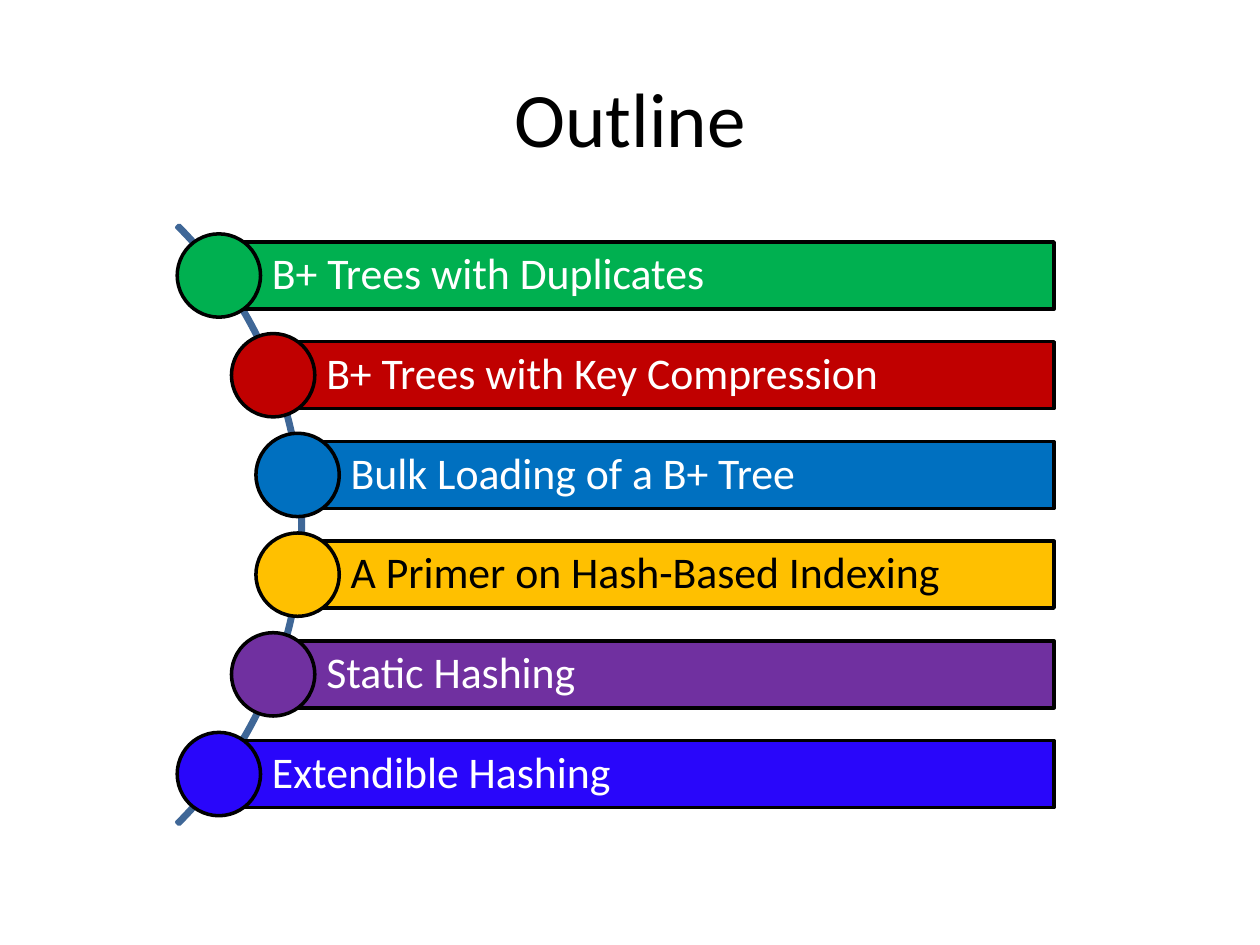
from math import sqrt

from pptx import Presentation
from pptx.dml.color import RGBColor
from pptx.enum.shapes import MSO_SHAPE as Shape
from pptx.enum.text import MSO_ANCHOR as Anchor, PP_ALIGN as Align
from pptx.util import Cm, Pt

TITLE = "Outline"
TOPICS = [
    ("B+ Trees with Duplicates", "00B050", "FFFFFF"),
    ("B+ Trees with Key Compression", "C00000", "FFFFFF"),
    ("Bulk Loading of a B+ Tree", "0070C0", "FFFFFF"),
    ("A Primer on Hash-Based Indexing", "FFC000", "000000"),
    ("Static Hashing", "7030A0", "FFFFFF"),
    ("Extendible Hashing", "2906FA", "FFFFFF"),
]
FONT = "Calibri"
ARC_X, ARC_Y, ARC_SIZE = -2.43, 10.58, 17.09
ORBIT = 8.49
PITCH = 2.01
BAR_HEIGHT, BAR_RIGHT = 1.35, 21.25
DOT_SIZE = 1.68


def color(hex_text):
    return RGBColor.from_string(hex_text)


def add_outlined(slide, kind, left, top, width, height, line, fill=None):
    shape = slide.shapes.add_shape(kind, Cm(left), Cm(top), Cm(width), Cm(height))
    shape.shadow.inherit = False
    if fill:
        shape.fill.solid()
        shape.fill.fore_color.rgb = color(fill)
    else:
        shape.fill.background()
    shape.line.color.rgb = color(line)
    shape.line.width = Pt(2)
    return shape


def set_text(shape, text, size, text_color, align):
    frame = shape.text_frame
    frame.text = text
    frame.word_wrap = True
    frame.vertical_anchor = Anchor.MIDDLE
    paragraph = frame.paragraphs[0]
    paragraph.alignment = align
    paragraph.font.name = FONT
    paragraph.font.size = Pt(size)
    paragraph.font.color.rgb = color(text_color)
    return frame


def add_arc(slide):
    arc = add_outlined(slide, Shape.BLOCK_ARC, ARC_X - ARC_SIZE / 2, ARC_Y - ARC_SIZE / 2,
                       ARC_SIZE, ARC_SIZE, "3F6797")
    for index, value in enumerate((189, 27, 0.004)):
        arc.adjustments[index] = value


def add_topic(slide, offset, text, fill, text_color):
    x = ARC_X + sqrt(ORBIT ** 2 - offset ** 2)
    y = ARC_Y + offset
    bar = add_outlined(slide, Shape.RECTANGLE, x, y - BAR_HEIGHT / 2,
                       BAR_RIGHT - x, BAR_HEIGHT, "000000", fill)
    frame = set_text(bar, text, 25, text_color, Align.LEFT)
    frame.paragraphs[0].line_spacing = 0.9
    frame.margin_left = Cm(1.07)
    frame.margin_right = frame.margin_top = frame.margin_bottom = Cm(0.18)
    add_outlined(slide, Shape.OVAL, x - DOT_SIZE / 2, y - DOT_SIZE / 2,
                 DOT_SIZE, DOT_SIZE, "000000", fill)


def main():
    """Build the outline slide with topics set along an arc."""
    presentation = Presentation()
    presentation.slide_width, presentation.slide_height = Cm(25.4), Cm(19.05)
    slide = presentation.slides.add_slide(presentation.slide_layouts[5])
    title = slide.shapes.title
    title.left, title.top, title.width, title.height = Cm(1.27), Cm(0.76), Cm(22.86), Cm(3.18)
    set_text(title, TITLE, 44, "000000", Align.CENTER)
    add_arc(slide)
    for index, topic in enumerate(TOPICS):
        add_topic(slide, (index - (len(TOPICS) - 1) / 2) * PITCH, *topic)
    presentation.save("out.pptx")


if __name__ == "__main__":
    main()
